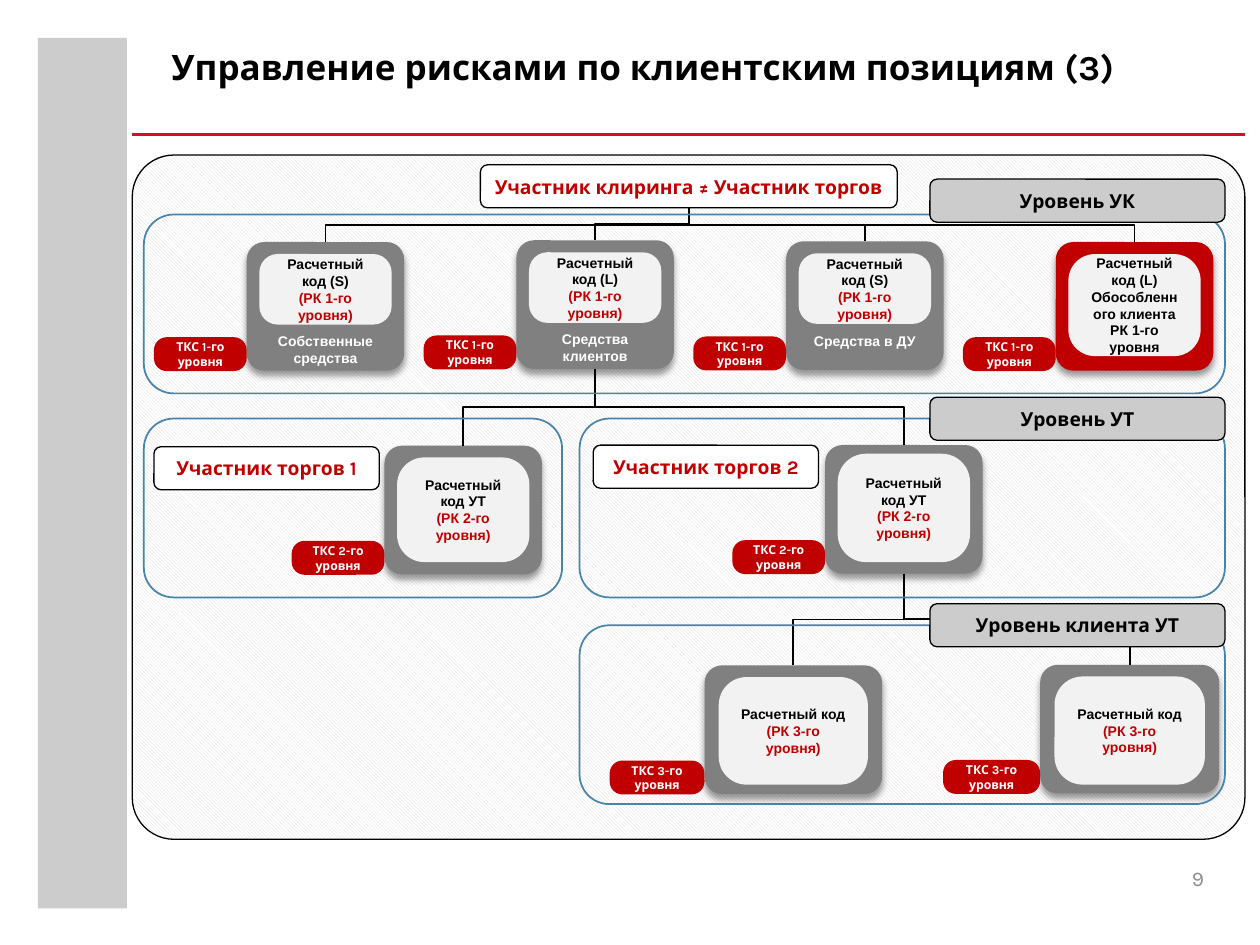
import pptx
import pptx.util
import pptx.dml.color
import pptx.enum.dml
import pptx.enum.shapes
import pptx.enum.text
import pptx.oxml
import pptx.oxml.ns

Pt = pptx.util.Pt
RGB = pptx.dml.color.RGBColor.from_string
KIND = pptx.enum.shapes.MSO_SHAPE
LINK = pptx.enum.shapes.MSO_CONNECTOR
ALIGN = pptx.enum.text.PP_ALIGN
ANCHOR = pptx.enum.text.MSO_ANCHOR
COLORS = {
    "black": "000000", "white": "FFFFFF", "red": "C00000", "rule": "CE1126",
    "silver": "CCCCCC", "gray": "808080", "pale": "F2F2F2", "blue": "4983A9",
    "hatch": "D9D9D9", "number": "8C8C8C",
}
SHADOW = (
    '<a:effectLst %s><a:outerShdw blurRad="50800" dist="38100" dir="5400000" '
    'rotWithShape="0"><a:srgbClr val="000000"><a:alpha val="40000"/></a:srgbClr>'
    '</a:outerShdw></a:effectLst>' % pptx.oxml.ns.nsdecls("a")
)
EMPTY = "<a:effectLst %s/>" % pptx.oxml.ns.nsdecls("a")

deck = pptx.Presentation()
deck.slide_width, deck.slide_height = Pt(720), Pt(540)
slide = deck.slides.add_slide(deck.slide_layouts[5])
shapes = slide.shapes


def write(frame, paras, size, font, align=ALIGN.CENTER):
    """Each paragraph is a list of (text, colour) runs."""
    frame.word_wrap = True
    for i, runs in enumerate(paras):
        para = frame.paragraphs[0] if i == 0 else frame.add_paragraph()
        para.alignment = align
        para.font.name, para.font.size, para.font.bold = font, Pt(size), True
        para.font.color.rgb = RGB(COLORS[runs[0][1]])
        for text, color in runs:
            run = para.add_run()
            run.text = text
            if color != runs[0][1]:
                run.font.color.rgb = RGB(COLORS[color])


def box(place, fill=None, line=None, width=0.75, adj=None, kind=KIND.ROUNDED_RECTANGLE):
    shape = shapes.add_shape(kind, *map(Pt, place))
    shape.shadow.inherit = False
    if fill:
        shape.fill.solid()
        shape.fill.fore_color.rgb = RGB(COLORS[fill])
    else:
        shape.fill.background()
    if line:
        shape.line.color.rgb = RGB(COLORS[line])
        shape.line.width = Pt(width)
    else:
        shape.line.fill.background()
    if adj:
        shape.adjustments[0] = adj
    shape.text_frame.vertical_anchor = ANCHOR.MIDDLE
    return shape


# Side bar, page number, rule and title
box((21.6, 21.6, 51, 497.5), "silver", kind=KIND.RECTANGLE)
page = shapes.add_textbox(Pt(660), Pt(488), Pt(28), Pt(28)).text_frame
page.margin_right = 0
page.vertical_anchor = ANCHOR.MIDDLE
write(page, [[("9", "number")]], 12, "Karla", ALIGN.RIGHT)
page.paragraphs[0].font.bold = False
rule = shapes.add_connector(LINK.STRAIGHT, Pt(75.6), Pt(77), Pt(711.4), Pt(77))
rule.line.color.rgb = RGB(COLORS["rule"])
rule.line.width = Pt(2)
rule._element.spPr.append(pptx.oxml.parse_xml(EMPTY))

title = shapes.title
title.left, title.top, title.width, title.height = map(Pt, (90.7, 22.3, 617.8, 59.8))
title.text_frame.vertical_anchor = ANCHOR.TOP
write(title.text_frame, [[("Управление рисками по клиентским позициям (3)", "black")]],
      20, "Karla", ALIGN.LEFT)

# Hatched backdrop
back = box((75.6, 88.6, 635.8, 391), "white", "black", adj=0.061)
back.fill.patterned()
back.fill.pattern = pptx.enum.dml.MSO_PATTERN.LIGHT_DOWNWARD_DIAGONAL
back.fill.fore_color.rgb = RGB(COLORS["hatch"])
back.fill.back_color.rgb = RGB(COLORS["white"])

# Cards: left, top, width, tag width, inner top and height, level, fill, text, caption
first = [("(РК 1-го уровня)", "red")]
second = [[("Расчетный код УТ", "black")], [("(РК 2-го уровня)", "red")]]
third = [[("Расчетный код ", "black"), ("(РК 3-го уровня)", "red")]]
own = [[("Расчетный код (S)", "black")], first]
pooled = [[("Расчетный код (L)", "black")], first]
apart = [[("Расчетный код (L) Обособленного клиента", "black")],
         [("РК 1-го уровня", "black")]]
cards = [
    (141, 138.3, 90, 53, 6.9, 40.3, 1, "gray", own, "Собственные средства"),
    (295.1, 137.3, 90, 53, 6.9, 40.3, 1, "gray", pooled, "Средства клиентов"),
    (449.2, 137.9, 90, 53, 6.9, 40.3, 1, "gray", own, "Средства в ДУ"),
    (603.3, 138.3, 90, 53, 6.9, 58.3, 1, "red", apart, None),
    (219.7, 254.7, 90, 53, 6.7, 59.8, 2, "gray", second, None),
    (471.5, 254.3, 90, 53, 5, 61.9, 2, "gray", second, None),
    (402.6, 380.2, 101.5, 54.2, 6.7, 61.5, 3, "gray", third, None),
    (594.4, 379.9, 102.3, 55.5, 6.7, 61.8, 3, "gray", third, None),
]
for x, y, wide, tab, drop, high, level, fill, text, note in cards:
    card = box((x, y, wide, 73.5), fill, adj=0.136)
    spot = card._element.spPr
    spot.replace(spot.find(pptx.oxml.ns.qn("a:effectLst")), pptx.oxml.parse_xml(SHADOW))
    tag = box((x - tab, y + 54.4, tab, 19.4), "red", adj=0.379)
    write(tag.text_frame, [[(f"ТКС {level}-го уровня", "white")]], 7, "Karla")
    inset = wide * 0.08
    inner = box((x + inset, y + drop, wide - 2 * inset, high), "pale", adj=0.26)
    write(inner.text_frame, text, 8, "Arial")
    if note:
        label = shapes.add_textbox(Pt(x + inset), Pt(y + 48.3), Pt(75.6), Pt(26.6))
        write(label.text_frame, [[(note, "white")]], 8, "Arial")

# Elbow links that leave downwards: an elbow turned by a quarter
links = [(393.8, 119, to) for to in cards[:4]]
links += [(340, 210.8, to) for to in cards[4:6]]
links += [(516.5, 327.8, to) for to in cards[6:]]
for x, y, to in links:
    end, foot = to[0] + to[2] / 2, to[1]
    midx, midy = (x + end) / 2, (y + foot) / 2
    side = 1 if end > x else -1
    long, half = abs(end - x) / 2, side * (foot - y) / 2
    link = shapes.add_connector(LINK.ELBOW, Pt(midx + half), Pt(midy - long),
                                Pt(midx - half), Pt(midy + long))
    link._element.spPr.find(pptx.oxml.ns.qn("a:xfrm")).set(
        "rot", "16200000" if side > 0 else "5400000")
    link.line.color.rgb = RGB(COLORS["black"])
    link.line.width = Pt(1)
    link._element.spPr.append(pptx.oxml.parse_xml(EMPTY))

# Blue frames around the levels
for x, y, wide in [(82.2, 122.6, 617.8), (82.2, 239.2, 239),
                   (331.2, 239.2, 368.8), (331.2, 357.3, 368.8)]:
    box((x, y, wide, 102.2), line="blue", width=1)

# Level and participant labels
for x, y, wide, fill, color, text in [
    (274.5, 94.2, 238.2, "white", "red", "Участник клиринга ≠ Участник торгов"),
    (531.4, 102.4, 168.6, "silver", "black", "Уровень УК"),
    (88, 255.3, 128.8, "white", "red", "Участник торгов 1"),
    (339, 254.4, 128.8, "white", "red", "Участник торгов 2"),
    (531.4, 227, 168.6, "silver", "black", "Уровень УТ"),
    (531.4, 345, 168.6, "silver", "black", "Уровень клиента УТ"),
]:
    label = box((x, y, wide, 24.6), fill, "black")
    write(label.text_frame, [[(text, color)]], 11, "Karla")

deck.save("out.pptx")
